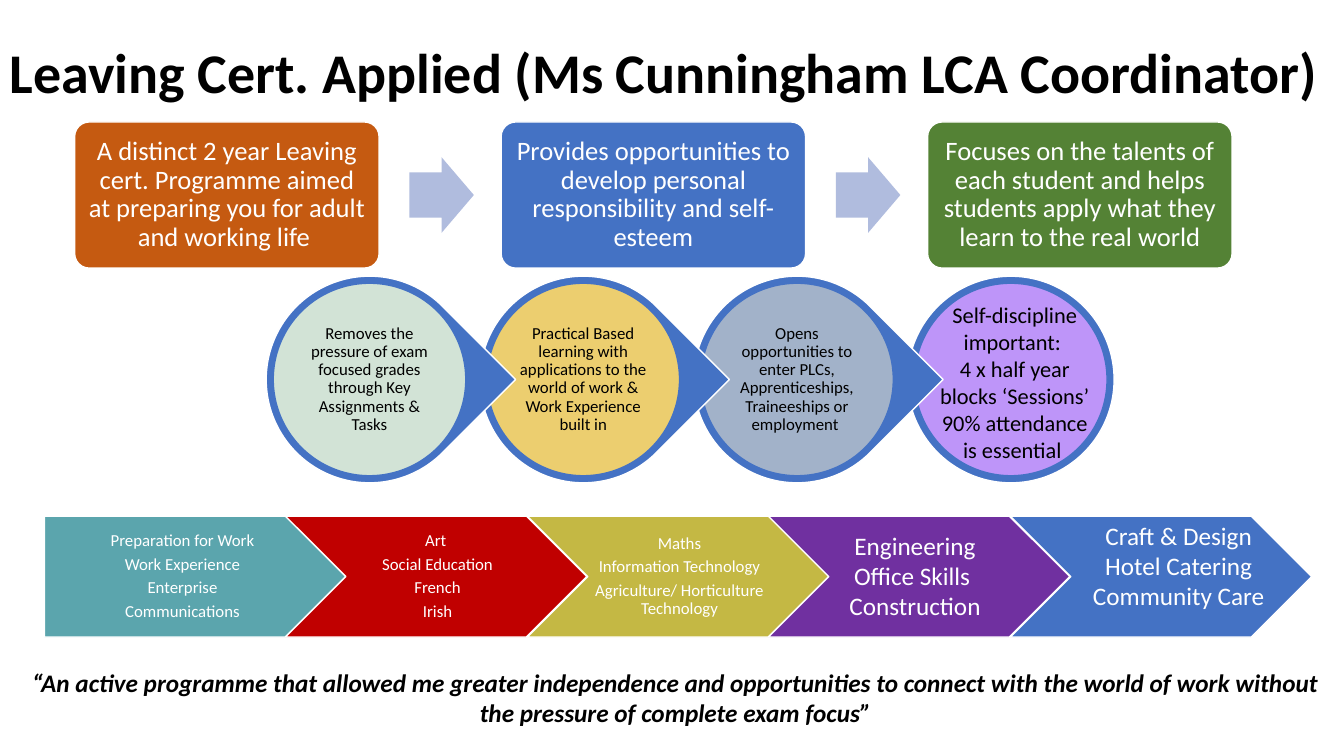
from dataclasses import dataclass

from lxml.etree import SubElement
from pptx import Presentation
from pptx.dml.color import RGBColor
from pptx.enum.shapes import MSO_SHAPE
from pptx.enum.text import MSO_ANCHOR, PP_ALIGN
from pptx.oxml.ns import qn
from pptx.util import Pt

HEADING = "Leaving Cert. Applied (Ms Cunningham LCA Coordinator)"
AIMS = [
    ("A distinct 2 year Leaving cert. Programme aimed at preparing you for adult and working life ", "C55A11"),
    ("Provides opportunities to develop personal responsibility and self-esteem", "4472C4"),
    ("Focuses on the talents of each student and helps students apply what they learn to the real world", "548235"),
]
BENEFITS = [
    ("Removes the pressure of exam focused grades through Key Assignments & Tasks", "E2F0D9"),
    ("Practical Based learning with applications to the world of work & Work Experience built in", "FFD966"),
    ("Opens opportunities to enter PLCs, Apprenticeships, Traineeships or employment ", "ADB9CA"),
    ("", "CC99FF"),
]
ATTENDANCE = ["Self-discipline important: ", "4 x half year blocks ‘Sessions’", "90% attendance is essential "]
SUBJECTS = [
    (["Preparation for Work", "Work Experience", "Enterprise", "Communications"], "5BA5AD"),
    (["Art ", "Social Education", "French", "Irish"], "C00000"),
    (["Maths", "Information Technology", "Agriculture/ Horticulture Technology"], "C4B844"),
    ([], "7030A0"),
    ([], "4472C4"),
]
VOCATIONAL = [
    (["Engineering", "Office Skills ", "Construction"], (822, 521, 171, 131)),
    (["Craft & Design", "Hotel Catering", "Community Care"], (1022, 511, 294, 101)),
]
QUOTE = (
    "“An active programme that allowed me greater independence and opportunities to connect "
    "with the world of work without the pressure of complete exam focus”"
)


@dataclass(frozen=True)
class Theme:
    font: str = "Calibri"
    dark: str = "000000"
    light: str = "FFFFFF"
    accent: str = "4472C4"
    arrow: str = "B0BCDE"
    heading: int = 40
    aim: int = 19
    subject: int = 18
    attendance: int = 16
    small: int = 12


THEME = Theme()
PX = 9144
CARD_LEFT, CARD_TOP, CARD_W, CARD_H, CARD_PITCH = 74, 121, 302, 145, 423
ARROW_LEFT, ARROW_TOP, ARROW_W, ARROW_H = 406, 156, 64, 75
DISC_LEFT, DISC_TOP, DISC_SIZE, DISC_PITCH, DISC_RIM = 264, 274, 205, 212, 7
BAND_LEFT, BAND_TOP, BAND_W, BAND_H, BAND_SPAN = 44, 512, 299, 120, 958

prs = Presentation()
prs.slide_width, prs.slide_height = 1333 * PX, 750 * PX
slide = prs.slides.add_slide(prs.slide_layouts[6])


def scaled(box):
    return [length * PX for length in box]


def add_figure(kind, box, fill, outline=THEME.light):
    figure = slide.shapes.add_shape(kind, *scaled(box))
    figure.shadow.inherit = False
    figure.fill.solid()
    figure.fill.fore_color.rgb = RGBColor.from_string(fill)
    if outline:
        figure.line.color.rgb = RGBColor.from_string(outline)
        figure.line.width = Pt(1)
    else:
        figure.line.fill.background()
    return figure


def write(holder, lines, size, color, insets=(10, 5, 10, 5), anchor=MSO_ANCHOR.TOP,
          align=PP_ALIGN.CENTER, spacing=1.0, after=0, bold=False, italic=False):
    frame = holder.text_frame
    frame.word_wrap = True
    frame.vertical_anchor = anchor
    frame.margin_left, frame.margin_top, frame.margin_right, frame.margin_bottom = scaled(insets)
    for index, line in enumerate(lines):
        paragraph = frame.add_paragraph() if index else frame.paragraphs[0]
        paragraph.alignment = align
        paragraph.line_spacing = spacing
        paragraph.space_after = Pt(after)
        run = paragraph.add_run()
        run.text = line
        run.font.name = THEME.font
        run.font.size = Pt(size)
        run.font.bold = bold
        run.font.italic = italic
        run.font.color.rgb = RGBColor.from_string(color)


def write_inside(figure, lines, size, color, insets):
    write(figure, lines, size, color, insets, MSO_ANCHOR.MIDDLE, spacing=0.9, after=round(size * 0.35))


def add_text(box, lines, size, color, **style):
    write(slide.shapes.add_textbox(*scaled(box)), lines, size, color, **style)


def add_aims():
    for index, (aim, fill) in enumerate(AIMS):
        shift = index * CARD_PITCH
        card = add_figure(MSO_SHAPE.ROUNDED_RECTANGLE, (CARD_LEFT + shift, CARD_TOP, CARD_W, CARD_H), fill)
        card.adjustments[0] = 0.1
        write_inside(card, [aim], THEME.aim, THEME.light, (8, 8, 8, 8))
        if index < len(AIMS) - 1:
            arrow = add_figure(MSO_SHAPE.RIGHT_ARROW, (ARROW_LEFT + shift, ARROW_TOP, ARROW_W, ARROW_H),
                               THEME.arrow, None)
            arrow.adjustments[0] = 0.6
            arrow.adjustments[1] = 0.5


def add_benefits():
    last = len(BENEFITS) - 1
    inner = DISC_SIZE - 2 * DISC_RIM
    for index in range(last, -1, -1):
        benefit, fill = BENEFITS[index]
        left = DISC_LEFT + index * DISC_PITCH
        kind = MSO_SHAPE.OVAL if index == last else MSO_SHAPE.TEAR
        rim = add_figure(kind, (left, DISC_TOP, DISC_SIZE, DISC_SIZE), THEME.accent)
        if index < last:
            rim.rotation = 45
        disc = add_figure(MSO_SHAPE.OVAL, (left + DISC_RIM, DISC_TOP + DISC_RIM, inner, inner),
                          fill, THEME.accent)
        tint = disc.fill._xPr.find(qn("a:solidFill"))[0]
        SubElement(tint, qn("a:alpha")).set("val", "90000")
        if benefit:
            write_inside(disc, [benefit], THEME.small, THEME.dark, (2, 2, 2, 2))


def add_subjects():
    for index, (names, fill) in enumerate(SUBJECTS):
        left = BAND_LEFT + index * BAND_SPAN // (len(SUBJECTS) - 1)
        kind = MSO_SHAPE.CHEVRON if index else MSO_SHAPE.PENTAGON
        band = add_figure(kind, (left, BAND_TOP, BAND_W, BAND_H), fill)
        if names:
            write_inside(band, names, THEME.small, THEME.light, (5 if index else 7, 4, 2, 4))


def main():
    add_text((0, 2, 1320, 145), [HEADING], THEME.heading, THEME.dark, insets=(10, 5, 0, 5),
             anchor=MSO_ANCHOR.MIDDLE, align=PP_ALIGN.LEFT, spacing=0.9, bold=True)
    add_aims()
    add_benefits()
    add_text((921, 294, 171, 172), ATTENDANCE, THEME.attendance, THEME.dark)
    add_subjects()
    for names, box in VOCATIONAL:
        add_text(box, names, THEME.subject, THEME.light)
    add_text((6, 657, 1328, 71), [QUOTE], THEME.subject, THEME.dark, bold=True, italic=True)
    prs.save("out.pptx")


if __name__ == "__main__":
    main()
